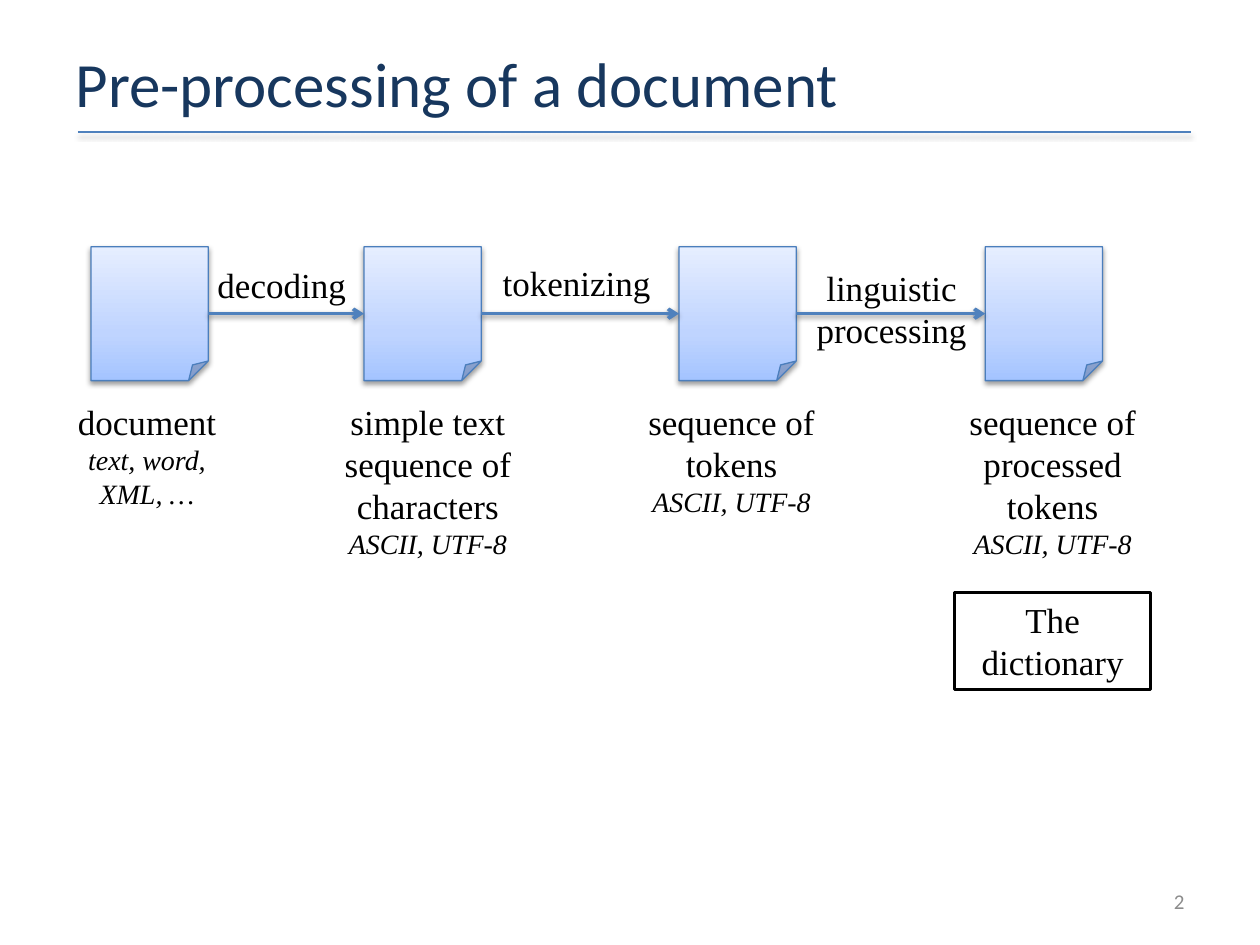
from copy import deepcopy

from lxml import etree
from pptx import Presentation
from pptx.dml.color import RGBColor
from pptx.enum.shapes import MSO_CONNECTOR, MSO_SHAPE
from pptx.enum.text import MSO_ANCHOR, PP_ALIGN
from pptx.oxml.ns import qn
from pptx.util import Pt

LEFT, CENTER, RIGHT = PP_ALIGN.LEFT, PP_ALIGN.CENTER, PP_ALIGN.RIGHT
TOP, MIDDLE = MSO_ANCHOR.TOP, MSO_ANCHOR.MIDDLE
STRAIGHT = MSO_CONNECTOR.STRAIGHT
TITLE_ONLY = 5

# Content
TITLE = "Pre-processing of a document"
PAGE_NUMBER = "2"
RESULT = "The dictionary"
# Stages: page left, caption left, caption width, caption lines, format line
STAGES = [
    (52, 36, 96, ["document"], "text, word, XML, …"),
    (208, 188.5, 112, ["simple text", "sequence of characters"], "ASCII, UTF-8"),
    (388, 362, 112, ["sequence of tokens"], "ASCII, UTF-8"),
    (563, 545.5, 112, ["sequence of processed tokens"], "ASCII, UTF-8"),
]
# Steps between stages: text, left, top, width, height
STEPS = [
    ("decoding", 113, 147, 96, 31.5),
    ("tokenizing", 273, 146, 113, 31.5),
    ("linguistic processing", 453, 149, 113, 55.5),
]
PAGE_TOP, PAGE_WIDTH, PAGE_HEIGHT = 141, 67, 76.5
CAPTION_TOP, CAPTION_HEIGHT = 225.5, 99

THEME = {
    "title": {"name": "Calibri", "size": Pt(36), "color": "17375E"},
    "number": {"name": "Calibri", "size": Pt(12), "color": "8C8C8C"},
    "label": {"name": "Times New Roman", "size": Pt(20), "color": "000000"},
    "format": {"name": "Times New Roman", "size": Pt(16), "color": "000000", "italic": True},
    "page_stops": [(0, "A4C4FF"), (0.35, "BFD4FF"), (1, "E6EEFF")],
    "page_line": "4B7EBC",
    "accent": "4F81BD",
    "black": "000000",
    "white": "FFFFFF",
}


def rgb(name):
    return RGBColor.from_string(THEME[name])


def points(*lengths):
    return [Pt(length) for length in lengths]


def write(shape, lines, align=CENTER, anchor=TOP):
    """Fill a shape with (text, style name) lines, one paragraph each."""
    frame = shape.text_frame
    frame.word_wrap = True
    frame.vertical_anchor = anchor
    for index, (text, style) in enumerate(lines):
        para = frame.add_paragraph() if index else frame.paragraphs[0]
        para.alignment = align
        span = para.add_run()
        span.text = text
        for key, value in THEME[style].items():
            if key == "color":
                span.font.color.rgb = RGBColor.from_string(value)
            else:
                setattr(span.font, key, value)


def add_text(slide, place, lines, **layout):
    write(slide.shapes.add_textbox(*points(*place)), lines, **layout)


def set_line(shape, color, width):
    shape.line.color.rgb = rgb(color)
    shape.line.width = Pt(width)


def add_shadow(shape):
    effects = etree.SubElement(shape._element.spPr, qn("a:effectLst"))
    shadow = etree.SubElement(
        effects, qn("a:outerShdw"), blurRad=str(Pt(3.1)), dist=str(Pt(1.6)),
        dir="5400000", rotWithShape="0")
    color = etree.SubElement(shadow, qn("a:srgbClr"), val=THEME["black"])
    etree.SubElement(color, qn("a:alpha"), val="38000")


def add_line(slide, left, right, y, width, arrow=False):
    line = slide.shapes.add_connector(STRAIGHT, *points(left, y, right, y))
    set_line(line, "accent", width)
    if arrow:
        etree.SubElement(line.line._get_or_add_ln(), qn("a:tailEnd"), type="arrow")
    add_shadow(line)


def add_page(slide, left):
    page = slide.shapes.add_shape(
        MSO_SHAPE.FOLDED_CORNER, *points(left, PAGE_TOP, PAGE_WIDTH, PAGE_HEIGHT))
    page.fill.gradient()
    page.fill.gradient_angle = 90
    stop_list = page._element.spPr.find(".//" + qn("a:gsLst"))
    stop_list.insert(1, deepcopy(stop_list[0]))
    for stop, (position, color) in zip(page.fill.gradient_stops, THEME["page_stops"]):
        stop.position = position
        stop.color.rgb = RGBColor.from_string(color)
    set_line(page, "page_line", 0.75)
    add_shadow(page)


def main():
    deck = Presentation()
    deck.slide_width, deck.slide_height = points(720, 540)
    slide = deck.slides.add_slide(deck.slide_layouts[TITLE_ONLY])

    # Title, rule and page number
    title = slide.shapes.title
    title.left, title.top, title.width, title.height = points(36, 21.5, 648, 51)
    write(title, [(TITLE, "title")], align=LEFT, anchor=MIDDLE)
    add_line(slide, 44.5, 680.5, 75.5, 1)
    add_text(slide, (516, 500.5, 168, 29), [(PAGE_NUMBER, "number")],
             align=RIGHT, anchor=MIDDLE)

    # Stages with captions
    for left, caption_left, caption_width, lines, file_format in STAGES:
        add_page(slide, left)
        add_text(slide, (caption_left, CAPTION_TOP, caption_width, CAPTION_HEIGHT),
                 [(line, "label") for line in lines] + [(file_format, "format")])

    # Arrows with step names
    arrow_y = PAGE_TOP + PAGE_HEIGHT / 2
    for stage, following, (text, *place) in zip(STAGES, STAGES[1:], STEPS):
        add_line(slide, stage[0] + PAGE_WIDTH, following[0], arrow_y, 2, arrow=True)
        add_text(slide, place, [(text, "label")])

    # Result box
    box = slide.shapes.add_shape(MSO_SHAPE.RECTANGLE, *points(545.5, 338.5, 112, 55.5))
    box.shadow.inherit = False
    box.fill.solid()
    box.fill.fore_color.rgb = rgb("white")
    set_line(box, "black", 2)
    write(box, [(RESULT, "label")])

    deck.save("out.pptx")


if __name__ == "__main__":
    main()
